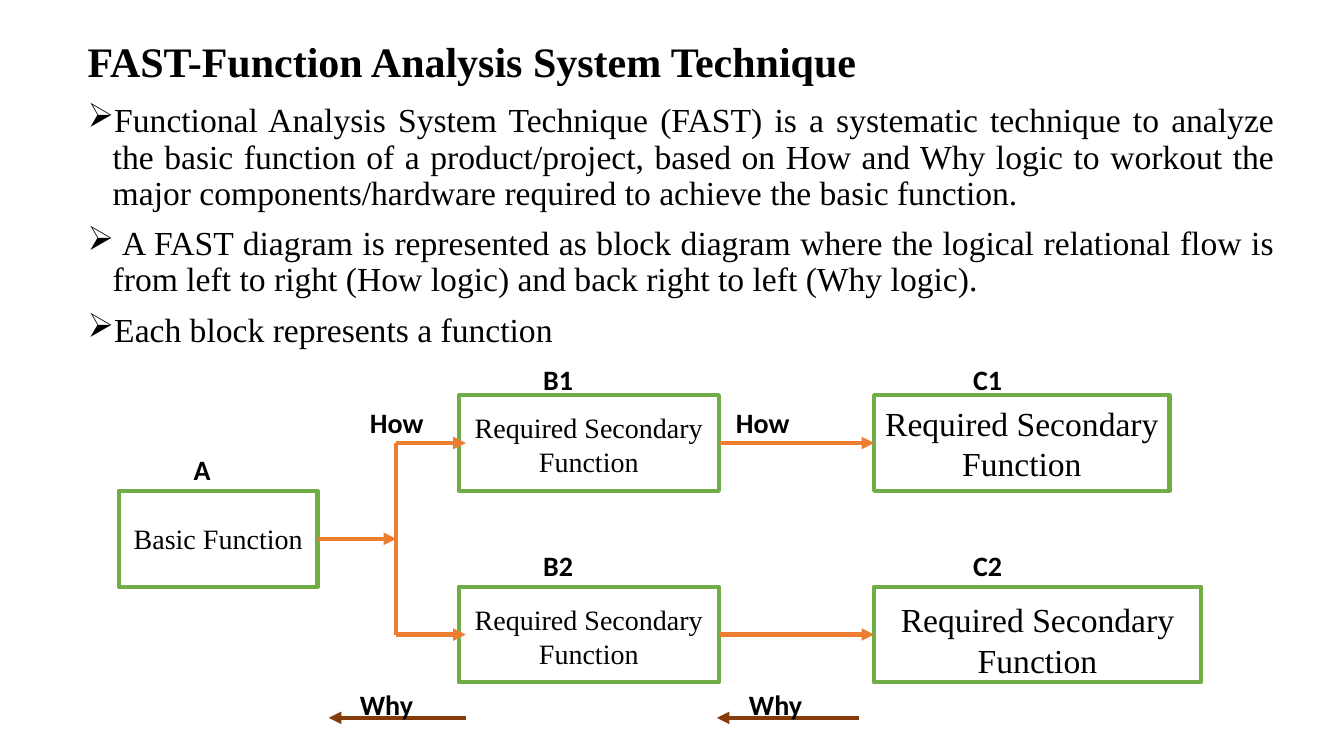
from lxml.etree import SubElement
from pptx import Presentation
from pptx.dml.color import RGBColor
from pptx.enum.shapes import MSO_CONNECTOR, MSO_SHAPE
from pptx.enum.text import MSO_ANCHOR, MSO_AUTO_SIZE, PP_ALIGN
from pptx.oxml.ns import qn
from pptx.util import Inches, Pt

SERIF, SANS = "Times New Roman", "Calibri"
BLACK, WHITE, GREEN, ORANGE, BROWN = "000000", "FFFFFF", "70AD47", "ED7D31", "843C0B"
COLUMNS = {"A": 1.18, "fork": 3.93, "B": 4.55, "C": 8.67}
ROW_TOP, ROW_HEIGHT = 3.92, 0.95
RIGHT, LEFT = 3, 1

POINTS = (
    "Functional Analysis System Technique (FAST) is a systematic technique to analyze "
    "the basic function of a product/project, based on How and Why logic to workout the "
    "major components/hardware required to achieve the basic function.",
    " A FAST diagram is represented as block diagram where the logical relational flow is "
    "from left to right (How logic) and back right to left (Why logic).",
    "Each block represents a function",
)

LABELS = (
    ("A", 1.61, 0.55, PP_ALIGN.CENTER),
    ("B1", 5.14, -0.39, PP_ALIGN.CENTER),
    ("B2", 5.14, 1.55, PP_ALIGN.CENTER),
    ("C1", 9.4, -0.39, PP_ALIGN.CENTER),
    ("C2", 9.4, 1.55, PP_ALIGN.CENTER),
    ("How", 3.57, 0.06, PP_ALIGN.LEFT),
    ("How", 7.2, 0.06, PP_ALIGN.LEFT),
    ("Why", 3.47, 3, PP_ALIGN.LEFT),
    ("Why", 7.33, 3, PP_ALIGN.LEFT),
)


def color(value):
    """Turn a hex string into a colour."""
    return RGBColor.from_string(value)


def row(number):
    """Give the vertical position of a diagram row, fractions allowed."""
    return Inches(ROW_TOP + ROW_HEIGHT * number)


def write(paragraph, text, size, font=SERIF, bold=False):
    """Add one black run to a paragraph."""
    run = paragraph.add_run()
    run.text = text
    run.font.size, run.font.name, run.font.bold = Pt(size), font, bold
    run.font.color.rgb = color(BLACK)


def add_frame(slide, left, top, width, height):
    """Add a wrapping text box and return its text frame."""
    frame = slide.shapes.add_textbox(left, top, width, height).text_frame
    frame.word_wrap = True
    return frame


def add_title(slide, text):
    """Add the bold heading."""
    frame = add_frame(slide, Inches(0.77), Inches(0.27), Inches(11.5), Inches(0.72))
    frame.vertical_anchor = MSO_ANCHOR.MIDDLE
    frame.paragraphs[0].line_spacing = 0.9
    write(frame.paragraphs[0], text, 30, bold=True)


def add_points(slide, points):
    """Add the justified list with arrow bullets."""
    frame = add_frame(slide, Inches(0.77), Inches(0.98), Inches(11.97), Inches(2.59))
    for index, point in enumerate(points):
        paragraph = frame.add_paragraph() if index else frame.paragraphs[0]
        paragraph.alignment = PP_ALIGN.JUSTIFY
        paragraph.line_spacing, paragraph.space_before = 0.9, Pt(10)
        properties = paragraph._p.get_or_add_pPr()
        properties.set("marL", str(Inches(0.25)))
        properties.set("indent", str(-Inches(0.25)))
        SubElement(properties, qn("a:buChar")).set("char", "➢")
        write(paragraph, point, 24)


def add_block(slide, column, row_number, width, text, size, drop=0):
    """Add a green-edged function block, its text lowered by a top inset."""
    block = slide.shapes.add_shape(
        MSO_SHAPE.RECTANGLE, Inches(COLUMNS[column]), row(row_number),
        Inches(width), Inches(ROW_HEIGHT))
    block.shadow.inherit = False
    block.fill.solid()
    block.fill.fore_color.rgb = color(WHITE)
    block.line.color.rgb = color(GREEN)
    block.line.width = Pt(3)
    frame = block.text_frame
    frame.word_wrap = True
    frame.vertical_anchor = MSO_ANCHOR.MIDDLE
    frame.margin_top = Inches(0.05 + drop)
    frame.paragraphs[0].alignment = PP_ALIGN.CENTER
    write(frame.paragraphs[0], text, size)
    return block


def add_flow(slide, start, end, hue=ORANGE, arrow=True):
    """Add a straight line between two (inches, row) points."""
    flow = slide.shapes.add_connector(
        MSO_CONNECTOR.STRAIGHT, Inches(start[0]), row(start[1]),
        Inches(end[0]), row(end[1]))
    flow.line.color.rgb = color(hue)
    flow.line.width = Pt(3)
    if arrow:
        SubElement(flow.line._get_or_add_ln(), qn("a:tailEnd")).set("type", "triangle")
    SubElement(flow._element.spPr, qn("a:effectLst"))
    return flow


def add_label(slide, text, left, row_number, alignment):
    """Add a bold caption beside a block or a flow."""
    frame = add_frame(slide, Inches(left), row(row_number), Inches(0.79), Inches(0.44))
    frame.auto_size = MSO_AUTO_SIZE.SHAPE_TO_FIT_TEXT
    frame.paragraphs[0].alignment = alignment
    write(frame.paragraphs[0], text, 20, SANS, True)


def main():
    """Build the slide and save it."""
    deck = Presentation()
    deck.slide_width, deck.slide_height = Inches(13.33), Inches(7.5)
    slide = deck.slides.add_slide(deck.slide_layouts[6])
    add_title(slide, "FAST-Function Analysis System Technique")
    add_points(slide, POINTS)

    secondary = "Required Secondary Function"
    basic = add_block(slide, "A", 1, 1.97, "Basic Function", 20)
    lower_b = add_block(slide, "B", 2, 2.58, secondary, 20, 0.03)
    upper_b = add_block(slide, "B", 0, 2.58, secondary, 20, 0.03)
    lower_c = add_block(slide, "C", 2, 3.24, secondary, 24, 0.1)
    upper_c = add_block(slide, "C", 0, 2.93, secondary, 24)

    fork = COLUMNS["fork"]
    add_flow(slide, (3.15, 1.5), (fork, 1.5)).begin_connect(basic, RIGHT)
    add_flow(slide, (fork, 0.5), (fork, 2.5), arrow=False)
    for level, source, target in ((0.5, upper_b, upper_c), (2.5, lower_b, lower_c)):
        how = add_flow(slide, (7.13, level), (COLUMNS["C"], level))
        how.begin_connect(source, RIGHT)
        how.end_connect(target, LEFT)
        add_flow(slide, (fork, level), (4.62, level))
    for start, end in ((8.52, 7.11), (4.62, 3.26)):
        add_flow(slide, (start, 3.37), (end, 3.37), BROWN)

    for label in LABELS:
        add_label(slide, *label)
    deck.save("out.pptx")


if __name__ == "__main__":
    main()
